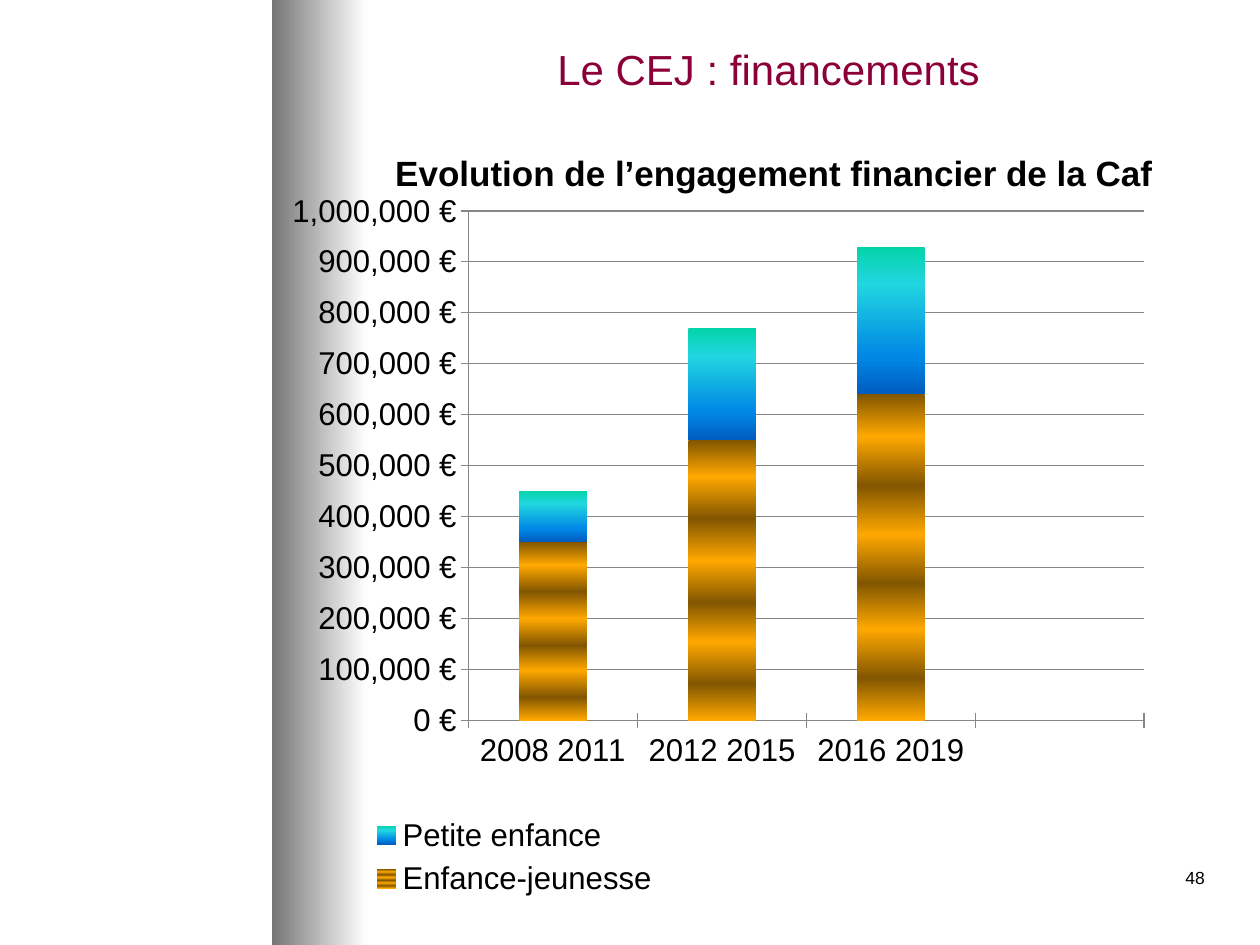
from lxml import etree
from pptx import Presentation
from pptx.chart.data import CategoryChartData
from pptx.dml.color import RGBColor
from pptx.enum.chart import XL_CHART_TYPE, XL_LEGEND_POSITION, XL_TICK_MARK
from pptx.enum.shapes import MSO_SHAPE
from pptx.enum.text import MSO_ANCHOR, PP_ALIGN
from pptx.oxml.ns import qn
from pptx.util import Inches, Pt

STACKED = XL_CHART_TYPE.COLUMN_STACKED
CROSS = XL_TICK_MARK.CROSS
CENTER, RIGHT = PP_ALIGN.CENTER, PP_ALIGN.RIGHT
FONT = "Arial"
COLORS = {
    "title": "8C0039", "text": "000000", "line": "868686",
    "band": "767676", "white": "FFFFFF",
    "brown": "825600", "gold": "FFA800",
    "green": "03D4A8", "cyan": "21D6E0", "blue": "0087E6", "navy": "005CBF",
}


def set_gradient(fill, properties, stops, angle):
    """Give a shape or series a linear gradient of (percent, color name) stops."""
    fill.solid()
    solid = properties.find(qn("a:solidFill"))
    gradient = etree.Element(qn("a:gradFill"), rotWithShape="1")
    stop_list = etree.SubElement(gradient, qn("a:gsLst"))
    for percent, name in stops:
        stop = etree.SubElement(stop_list, qn("a:gs"), pos=str(percent * 1000))
        etree.SubElement(stop, qn("a:srgbClr"), val=COLORS[name])
    etree.SubElement(gradient, qn("a:lin"), ang=str(angle * 60000), scaled="0")
    properties.replace(solid, gradient)


def write(box, text, size, color, align, bold=False):
    box.text_frame.word_wrap = True
    para = box.text_frame.paragraphs[0]
    para.alignment = align
    span = para.add_run()
    span.text = text
    span.font.name = FONT
    span.font.size = Pt(size)
    span.font.bold = bold
    span.font.color.rgb = RGBColor.from_string(COLORS[color])


deck = Presentation()
deck.slide_width, deck.slide_height = Inches(10), Inches(7.5)
page = deck.slides.add_slide(deck.slide_layouts[5])

# Shaded band and title
band = page.shapes.add_shape(
    MSO_SHAPE.RECTANGLE, Inches(2.16), 0, Inches(0.75), Inches(7.5))
band.shadow.inherit = False
band.line.fill.background()
set_gradient(band.fill, band.element.spPr, [(0, "band"), (100, "white")], 0)

title = page.shapes.title
title.left, title.top = Inches(2.4), Inches(0.25)
title.width, title.height = Inches(7.4), Inches(0.59)
title.text_frame.vertical_anchor = MSO_ANCHOR.MIDDLE
write(title, "Le CEJ : financements", 24, "title", CENTER)

number = page.shapes.add_textbox(
    Inches(7.58), Inches(6.83), Inches(2.08), Inches(0.5))
write(number, "48", 10, "text", RIGHT)

# Stacked column chart
data = CategoryChartData(number_format='#,##0\\ "€"')
data.categories = ["2008 2011", "2012 2015", "2016 2019", ""]
data.add_series("Enfance-jeunesse", [350000, 550000, 640000, None])
data.add_series("Petite enfance", [100000, 220000, 290000, None])
chart = page.shapes.add_chart(
    STACKED, Inches(2.32), Inches(1.44), Inches(7.34), Inches(5.86), data).chart
chart.has_title = False
chart.font.name = FONT
chart.font.size = Pt(18)
chart.font.color.rgb = RGBColor.from_string(COLORS["text"])

plot = chart.plots[0]
plot.vary_by_categories = False
plot.gap_width = 150
plot.overlap = 100
stripes = [(percent, ("brown", "gold")[i % 2])
           for i, percent in enumerate([0, 13, 28, 43, 58, 72, 87, 100])]
ocean = [(0, "green"), (25, "cyan"), (75, "blue"), (100, "navy")]
for series, stops in zip(plot.series, [stripes, ocean]):
    series.format.fill.solid()
    set_gradient(series.format.fill, series._element.find(qn("c:spPr")), stops, 90)

amounts = chart.value_axis
amounts.minimum_scale, amounts.maximum_scale = 0, 1000000
amounts.major_unit = 100000
amounts.has_major_gridlines = True
amounts.tick_labels.number_format = '#,##0\\ "€"'
amounts.tick_labels.number_format_is_linked = False
for axis in (amounts, chart.category_axis):
    axis.major_tick_mark = CROSS
    axis.format.line.color.rgb = RGBColor.from_string(COLORS["line"])
gridline = amounts.major_gridlines.format.line
gridline.color.rgb = RGBColor.from_string(COLORS["line"])

chart.has_legend = True
chart.legend.position = XL_LEGEND_POSITION.RIGHT
chart.legend.include_in_layout = False

# Manual places of the plot (inner area) and the legend, as fractions of the chart
plot_area = chart._chartSpace.chart.plotArea
legend = chart.legend._element
for parent, index, inner, place in (
        (plot_area, 0, True, (0.18, 0.04, 0.74, 0.69)),
        (legend, 1, False, (0.05, 0.85, 0.36, 0.13))):
    for old in parent.findall(qn("c:layout")):
        parent.remove(old)
    layout = etree.Element(qn("c:layout"))
    manual = etree.SubElement(layout, qn("c:manualLayout"))
    if inner:
        etree.SubElement(manual, qn("c:layoutTarget"), val="inner")
    for mode in ("xMode", "yMode"):
        etree.SubElement(manual, qn("c:" + mode), val="edge")
    for key, value in zip("xywh", place):
        etree.SubElement(manual, qn("c:" + key), val=str(value))
    parent.insert(index, layout)

# Chart heading
heading = page.shapes.add_textbox(
    Inches(2.56), Inches(1.15), Inches(7.17), Inches(0.44))
write(heading, "Evolution de l’engagement financier de la Caf", 20, "text", CENTER, True)

deck.save("out.pptx")
